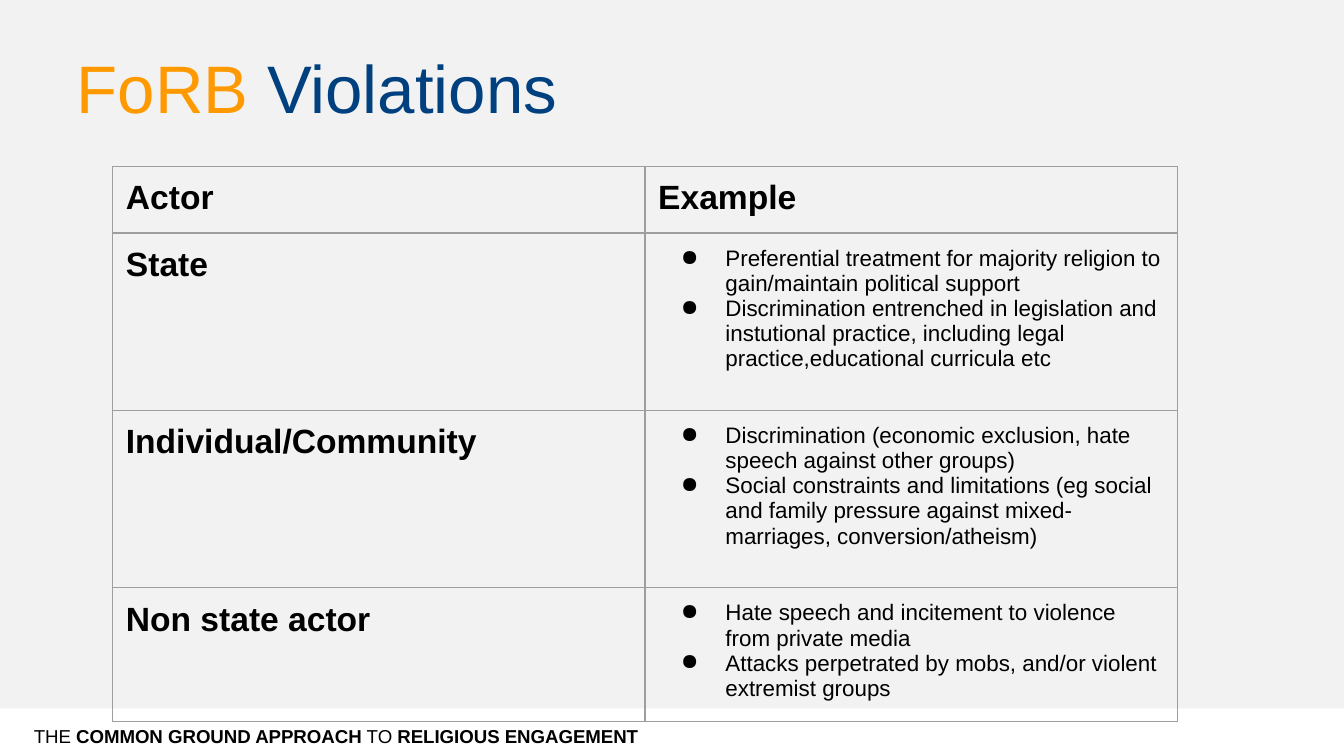
import lxml.etree
import pptx
import pptx.dml.color
import pptx.enum.shapes
import pptx.enum.text
import pptx.oxml.ns
import pptx.util

Cm = pptx.util.Cm
Pt = pptx.util.Pt
qn = pptx.oxml.ns.qn


def colour(value):
    return pptx.dml.color.RGBColor.from_string(value)


class SlideBuilder:
    font = "Arial"
    black = "000000"
    border = "9E9E9E"

    def __init__(self, slide):
        self.slide = slide

    def background(self, fill):
        self.slide.background.fill.solid()
        self.slide.background.fill.fore_color.rgb = colour(fill)

    def style(self, span, size, ink=black, bold=False):
        span.font.name = self.font
        span.font.size = Pt(size)
        span.font.bold = bold
        span.font.color.rgb = colour(ink)

    def band(self, left, top, width, height, fill):
        kind = pptx.enum.shapes.MSO_SHAPE.RECTANGLE
        shape = self.slide.shapes.add_shape(
            kind, Cm(left), Cm(top), Cm(width), Cm(height))
        shape.shadow.inherit = False
        shape.fill.solid()
        shape.fill.fore_color.rgb = colour(fill)
        shape.line.fill.background()

    def text(self, left, top, width, height, spans, size, anchor, inset):
        """Spans are (text, colour, bold) triples on one line."""
        box = self.slide.shapes.add_textbox(
            Cm(left), Cm(top), Cm(width), Cm(height))
        frame = box.text_frame
        frame.word_wrap = True
        frame.vertical_anchor = anchor
        frame.margin_left = frame.margin_right = Cm(inset[0])
        frame.margin_top = frame.margin_bottom = Cm(inset[1])
        for words, ink, bold in spans:
            span = frame.paragraphs[0].add_run()
            span.text = words
            self.style(span, size, ink, bold)

    def bullet(self, para):
        props = para._p.get_or_add_pPr()
        props.set("marL", str(Cm(1.27)))
        props.set("indent", str(Cm(-0.84)))
        tint = lxml.etree.SubElement(props, qn("a:buClr"))
        lxml.etree.SubElement(tint, qn("a:srgbClr"), val=self.black)
        lxml.etree.SubElement(props, qn("a:buChar"), char="●")

    def outline(self, cell):
        props = cell._tc.get_or_add_tcPr()
        for place, side in enumerate(("lnL", "lnR", "lnT", "lnB")):
            line = lxml.etree.Element(qn("a:" + side), w=str(Pt(0.75)))
            fill = lxml.etree.SubElement(line, qn("a:solidFill"))
            lxml.etree.SubElement(fill, qn("a:srgbClr"), val=self.border)
            props.insert(place, line)

    def cell(self, cell, lines, size, bold, bulleted):
        cell.fill.background()
        cell.margin_left = cell.margin_right = Cm(0.25)
        cell.margin_top = cell.margin_bottom = Cm(0.25)
        cell.text_frame.text = "\n".join(lines)
        for para in cell.text_frame.paragraphs:
            if bulleted:
                self.bullet(para)
            self.style(para.runs[0], size, bold=bold)
        self.outline(cell)

    def table(self, left, top, widths, heights, header, rows):
        frame = self.slide.shapes.add_table(
            len(heights), len(widths), Cm(left), Cm(top),
            Cm(sum(widths)), Cm(sum(heights)))
        table = frame.table
        table.first_row = table.horz_banding = False
        for column, width in zip(table.columns, widths):
            column.width = Cm(width)
        for row, height in zip(table.rows, heights):
            row.height = Cm(height)
        for index, words in enumerate(header):
            self.cell(table.cell(0, index), [words], 18, True, False)
        for index, (actor, examples) in enumerate(rows, start=1):
            self.cell(table.cell(index, 0), [actor], 18, True, False)
            self.cell(table.cell(index, 1), examples, 12, False, True)


VIOLATIONS = [
    ("State", [
        "Preferential treatment for majority religion to gain/maintain "
        "political support",
        "Discrimination entrenched in legislation and instutional practice, "
        "including legal practice,educational curricula etc"]),
    ("Individual/Community", [
        "Discrimination (economic exclusion, hate speech against other "
        "groups)",
        "Social constraints and limitations (eg social and family pressure "
        "against mixed-marriages, conversion/atheism)"]),
    ("Non state actor", [
        "Hate speech and incitement to violence from private media",
        "Attacks perpetrated by mobs, and/or violent extremist groups"]),
]


def main():
    deck = pptx.Presentation()
    deck.slide_width, deck.slide_height = Cm(25.4), Cm(14.29)
    page = SlideBuilder(deck.slides.add_slide(deck.slide_layouts[6]))
    anchors = pptx.enum.text.MSO_ANCHOR
    page.background("F2F2F2")

    # Footer
    page.band(0, 13.39, 25.4, 0.9, "FFFFFF")
    page.text(0.39, 13.74, 12.17, 0.36, [
        ("THE ", page.black, False),
        ("COMMON GROUND APPROACH ", page.black, True),
        ("TO ", page.black, False),
        ("RELIGIOUS ENGAGEMENT", page.black, True),
    ], 10, anchors.MIDDLE, (0.25, 0.13))

    # Title
    page.text(1.27, 0.58, 22.86, 1.17, [
        ("FoRB", "FF9900", False),
        (" Violations", "00407F", False),
    ], 36, anchors.TOP, (0.18, 0.3))

    # Table of actors and examples
    page.table(2.13, 3.14, [10.06, 10.06], [1.22, 3.35, 3.35, 2.4],
               ["Actor", "Example"], VIOLATIONS)

    deck.save("out.pptx")


if __name__ == "__main__":
    main()
